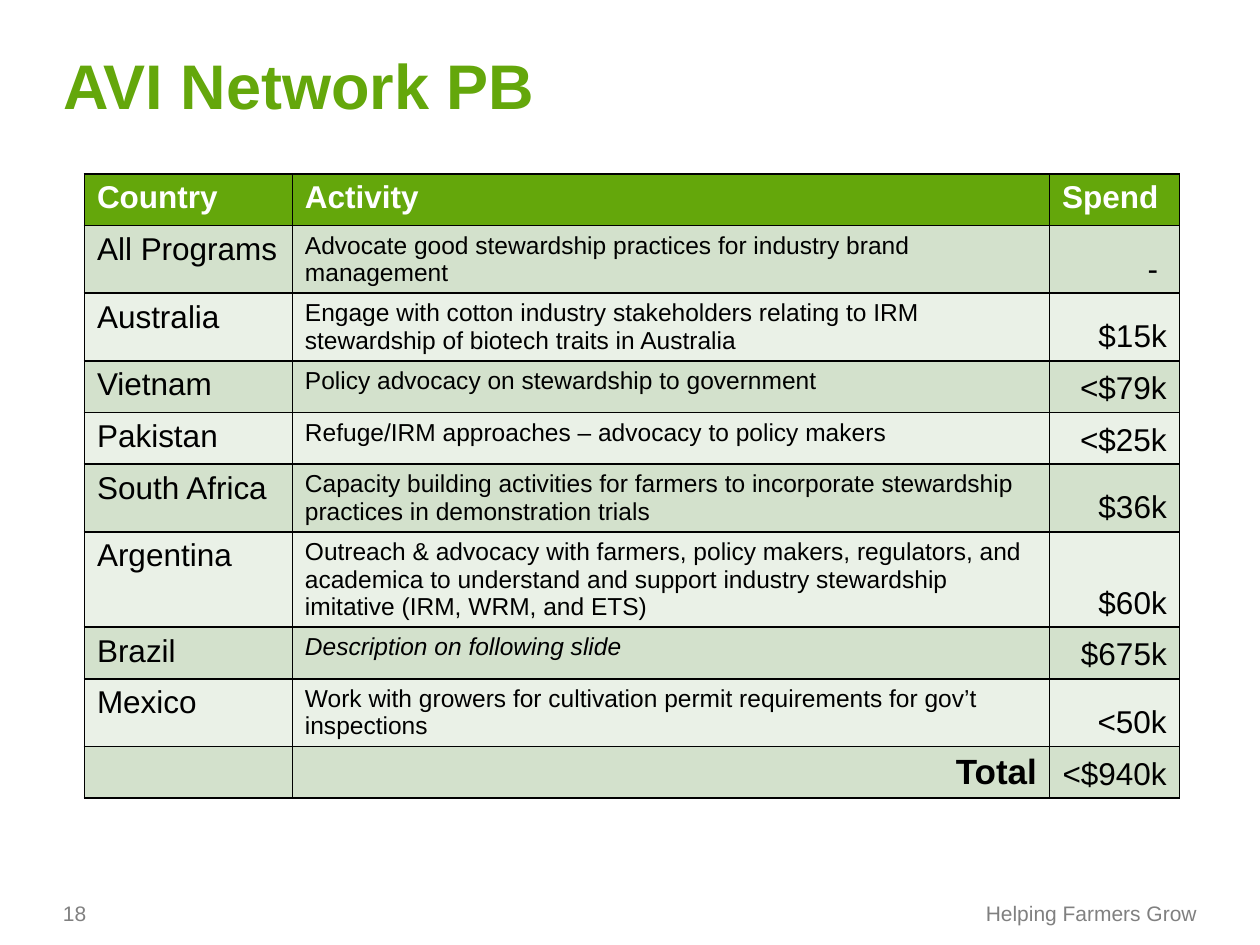
"""Build the AVI Network PB spending slide."""
from lxml.etree import fromstring
from pptx import Presentation
from pptx.dml.color import RGBColor
from pptx.enum.text import MSO_ANCHOR as ANCHOR, PP_ALIGN as ALIGN
from pptx.util import Inches, Pt

GREEN = RGBColor(0x64, 0xA7, 0x0B)
BAND = RGBColor(0xD3, 0xE1, 0xCC)
PALE = RGBColor(0xEA, 0xF1, 0xE7)
GREY = RGBColor(0x80, 0x80, 0x80)
WHITE = RGBColor(0xFF, 0xFF, 0xFF)
BLACK = RGBColor(0, 0, 0)
NS = "http://schemas.openxmlformats.org/drawingml/2006/main"

ROWS = [
    ("Country", "Activity", "Spend"),
    ("All Programs", "Advocate good stewardship practices for industry brand management", " - "),
    ("Australia", "Engage with cotton industry stakeholders relating to IRM "
     "stewardship of biotech traits in Australia", "$15k"),
    ("Vietnam", "Policy advocacy on stewardship to government", "<$79k"),
    ("Pakistan", "Refuge/IRM approaches – advocacy to policy makers", "<$25k"),
    ("South Africa", "Capacity building activities for farmers to incorporate "
     "stewardship practices in demonstration trials", "$36k"),
    ("Argentina", "Outreach & advocacy with farmers, policy makers, regulators, and "
     "academica to understand and support industry stewardship imitative "
     "(IRM, WRM, and ETS)", "$60k"),
    ("Brazil", "Description on following slide", "$675k"),
    ("Mexico", "Work with growers for cultivation permit requirements for "
     "gov’t inspections", "<50k"),
    ("", "Total", "<$940k"),
]
COLS = (1.65, 6.01, 1.03)
ROW_H = 0.41
LAST = len(ROWS) - 1


def write(tf, text, color, size, align=ALIGN.LEFT, **fmt):
    p = tf.paragraphs[0]
    p.alignment = align
    if text:
        r = p.add_run()
        r.text = text
        r.font.color.rgb = color
        for key, value in {"name": "Arial", "size": Pt(size), **fmt}.items():
            setattr(r.font, key, value)
    else:
        p.font.size = Pt(size)


prs = Presentation()
prs.slide_width, prs.slide_height = Inches(10), Inches(7.5)
s = prs.slides.add_slide(prs.slide_layouts[6])

frame = s.shapes.add_table(len(ROWS), len(COLS), Inches(0.67), Inches(1.38),
                           Inches(sum(COLS)), Inches(ROW_H * len(ROWS)))
table = frame.table
for col, width in zip(table.columns, COLS):
    col.width = Inches(width)
for i, row in enumerate(ROWS):
    table.rows[i].height = Inches(ROW_H)
    for j, text in enumerate(row):
        cell = table.cell(i, j)
        cell.fill.solid()
        cell.fill.fore_color.rgb = GREEN if i == 0 else BAND if i % 2 else PALE
        total = i == LAST and j == 1
        size = 20 if total else 14 if i and j == 1 else 18
        right = total or (i > 0 and j == 2)
        cell.vertical_anchor = ANCHOR.BOTTOM if i and j == 2 else ANCHOR.TOP
        write(cell.text_frame, text, BLACK if i else WHITE, size,
              ALIGN.RIGHT if right else ALIGN.LEFT,
              bold=i == 0 or total, italic=text.startswith("Description"))
        tc_pr = cell._tc.get_or_add_tcPr()
        for k, side in enumerate("LRTB"):
            tc_pr.insert(k, fromstring(
                f'<a:ln{side} xmlns:a="{NS}" w="12700"><a:solidFill>'
                f'<a:srgbClr val="{BLACK}"/></a:solidFill></a:ln{side}>'))

LABELS = [
    ("AVI Network PB", (0.5, 0.37, 6.25, 0.61), GREEN, 36, ALIGN.LEFT, ANCHOR.TOP, True),
    ("18", (0.5, 7.14, 1.17, 0.21), GREY, 12, ALIGN.LEFT, ANCHOR.BOTTOM, False),
    ("Helping Farmers Grow", (7.77, 7.14, 1.73, 0.21), GREY, 12, ALIGN.RIGHT,
     ANCHOR.BOTTOM, False),
]
for text, box, color, size, align, anchor, bold in LABELS:
    tf = s.shapes.add_textbox(*map(Inches, box)).text_frame
    for key, value in {"word_wrap": True, "vertical_anchor": anchor, "margin_left": 0,
                       "margin_right": 0, "margin_top": 0, "margin_bottom": 0}.items():
        setattr(tf, key, value)
    write(tf, text, color, size, align, bold=bold)

prs.save("out.pptx")
